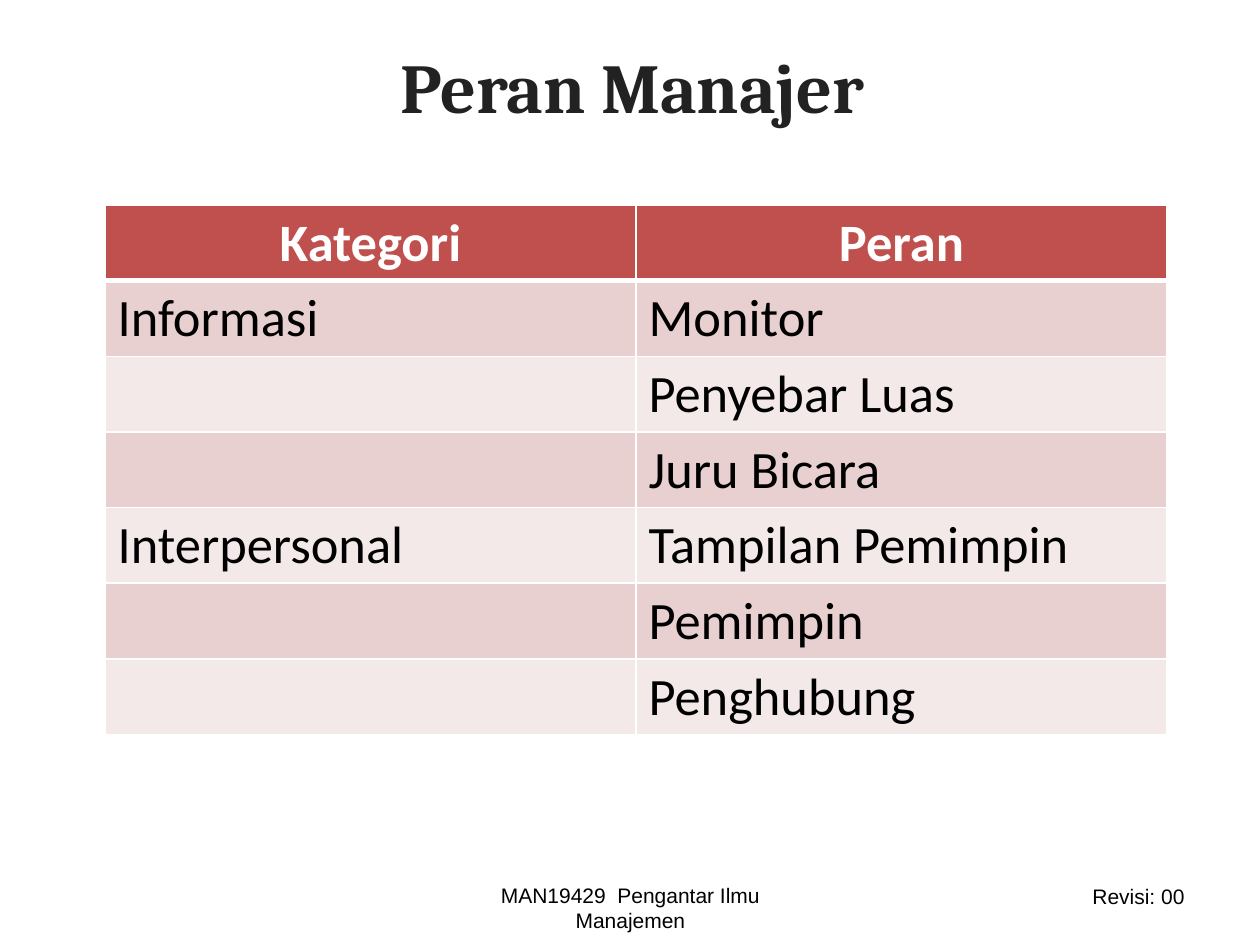
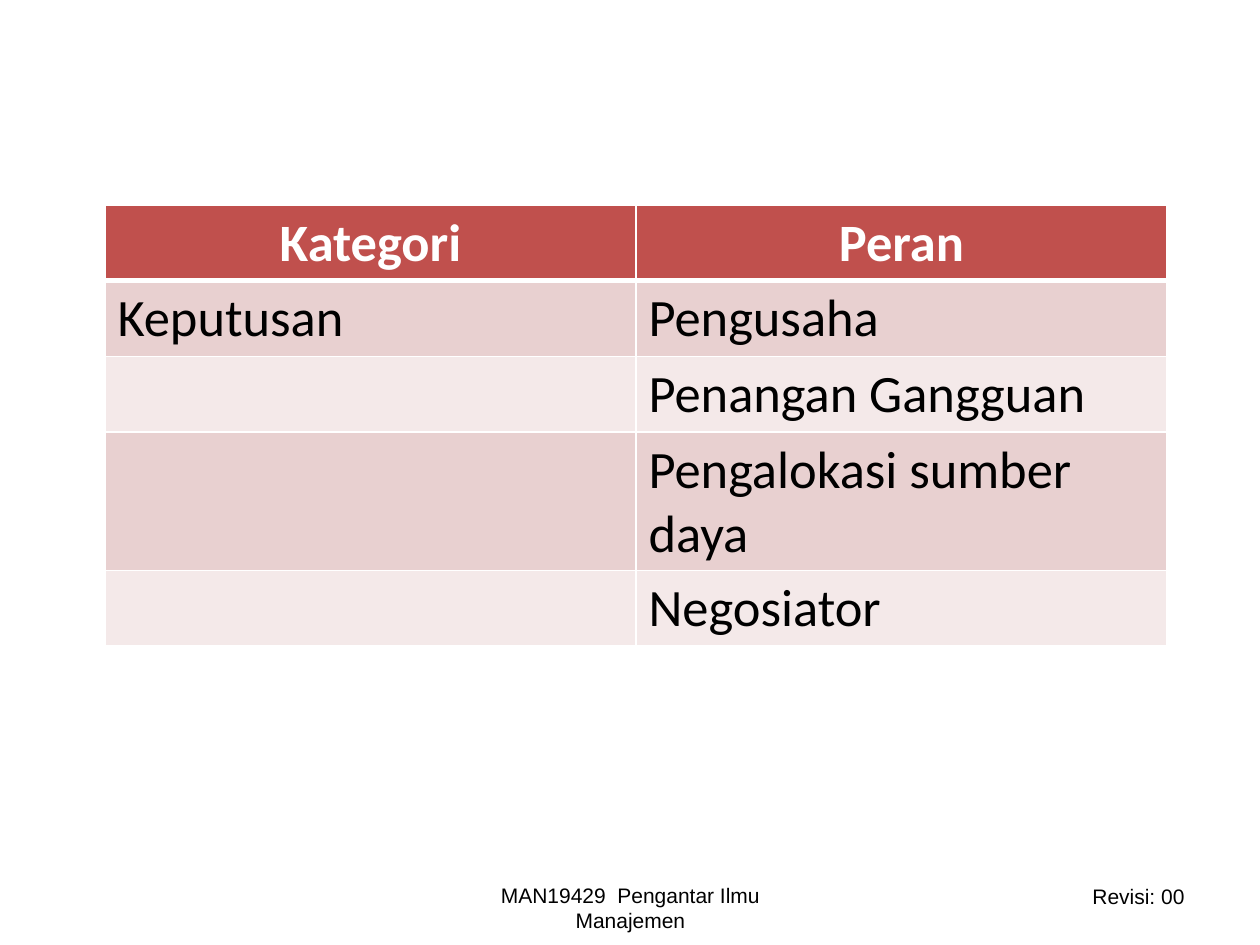
import lxml.etree
import pptx
import pptx.dml.color
import pptx.enum.text
import pptx.oxml.ns
import pptx.util

PX = 914400 // 126  # EMU in one px

WHITE, BLACK, TITLE_GREY = "FFFFFF", "000000", "222222"
HEADER_RED, BAND_DARK, BAND_LIGHT = "C0504D", "E8D0D0", "F4E9E9"

LEFT = pptx.enum.text.PP_ALIGN.LEFT
CENTER = pptx.enum.text.PP_ALIGN.CENTER
RIGHT = pptx.enum.text.PP_ALIGN.RIGHT

TITLE_ONLY, BLANK = 5, 6

TABLE_LEFT, TABLE_TOP = 105, 205
COLUMN_WIDTH, ROW_HEIGHT = 531, 75
HEADINGS = ("Kategori", "Peran")


def px(length):
    return pptx.util.Emu(length * PX)


def color(value):
    return pptx.dml.color.RGBColor.from_string(value)


def write(frame, text, font="Calibri", size=30, ink=BLACK, bold=False, align=LEFT):
    para = frame.paragraphs[0]
    para.alignment = align
    span = para.add_run()
    span.text = text
    span.font.name = font
    span.font.size = pptx.util.Pt(size)
    span.font.bold = bold
    span.font.color.rgb = color(ink)


def add_title(page, text):
    title = page.shapes.title
    title.left, title.top, title.width, title.height = px(382), px(37), px(501), px(97)
    frame = title.text_frame
    frame.word_wrap = False
    frame.auto_size = pptx.enum.text.MSO_AUTO_SIZE.NONE
    frame.vertical_anchor = pptx.enum.text.MSO_ANCHOR.TOP
    write(frame, text, font="Cambria", size=40, ink=TITLE_GREY, bold=True, align=CENTER)


def add_footer_text(page, left, top, width, height, text, align):
    box = page.shapes.add_textbox(px(left), px(top), px(width), px(height))
    box.text_frame.word_wrap = True
    write(box.text_frame, text, font="Arial", size=12, align=align)


def add_footer(page):
    add_footer_text(page, 903, 877, 294, 38, "Revisi: 00", RIGHT)
    add_footer_text(page, 431, 876, 399, 50, "MAN19429  Pengantar Ilmu Manajemen", CENTER)


def set_borders(cell, top=1, bottom=1):
    properties = cell._tc.get_or_add_tcPr()
    for side, points in (("L", 1), ("R", 1), ("T", top), ("B", bottom)):
        line = lxml.etree.SubElement(
            properties, pptx.oxml.ns.qn(f"a:ln{side}"), w=str(pptx.util.Pt(points)))
        fill = lxml.etree.SubElement(line, pptx.oxml.ns.qn("a:solidFill"))
        lxml.etree.SubElement(fill, pptx.oxml.ns.qn("a:srgbClr"), val=WHITE)


def fill_cell(cell, row, text):
    # The rule under the header is thicker than the others
    set_borders(cell, top=3 if row == 1 else 1, bottom=3 if row == 0 else 1)
    band = HEADER_RED if row == 0 else BAND_DARK if row % 2 else BAND_LIGHT
    cell.fill.solid()
    cell.fill.fore_color.rgb = color(band)
    if text and row == 0:
        write(cell.text_frame, text, ink=WHITE, bold=True, align=CENTER)
    elif text:
        write(cell.text_frame, text)


def add_role_table(page, categories):
    rows = [HEADINGS]
    for category, roles in categories.items():
        rows += [(category if i == 0 else "", role) for i, role in enumerate(roles)]
    table = page.shapes.add_table(
        len(rows), len(HEADINGS), px(TABLE_LEFT), px(TABLE_TOP),
        px(COLUMN_WIDTH * len(HEADINGS)), px(ROW_HEIGHT * len(rows))).table
    for column in table.columns:
        column.width = px(COLUMN_WIDTH)
    for row, texts in enumerate(rows):
        table.rows[row].height = px(ROW_HEIGHT)
        for column, text in enumerate(texts):
            fill_cell(table.cell(row, column), row, text)


def add_page(deck, categories, title=None):
    page = deck.slides.add_slide(deck.slide_layouts[TITLE_ONLY if title else BLANK])
    add_footer(page)
    if title:
        add_title(page, title)
    add_role_table(page, categories)


def main():
    deck = pptx.Presentation()
    deck.slide_width, deck.slide_height = px(1260), px(945)

    # Informational and interpersonal roles
    add_page(deck, {
        "Informasi": ("Monitor", "Penyebar Luas", "Juru Bicara"),
        "Interpersonal": ("Tampilan Pemimpin", "Pemimpin", "Penghubung"),
    }, title="Peran Manajer")

    # Decisional roles
    add_page(deck, {
        "Keputusan": ("Pengusaha", "Penangan Gangguan",
                      "Pengalokasi sumber daya", "Negosiator"),
    })

    deck.save("out.pptx")


if __name__ == "__main__":
    main()
